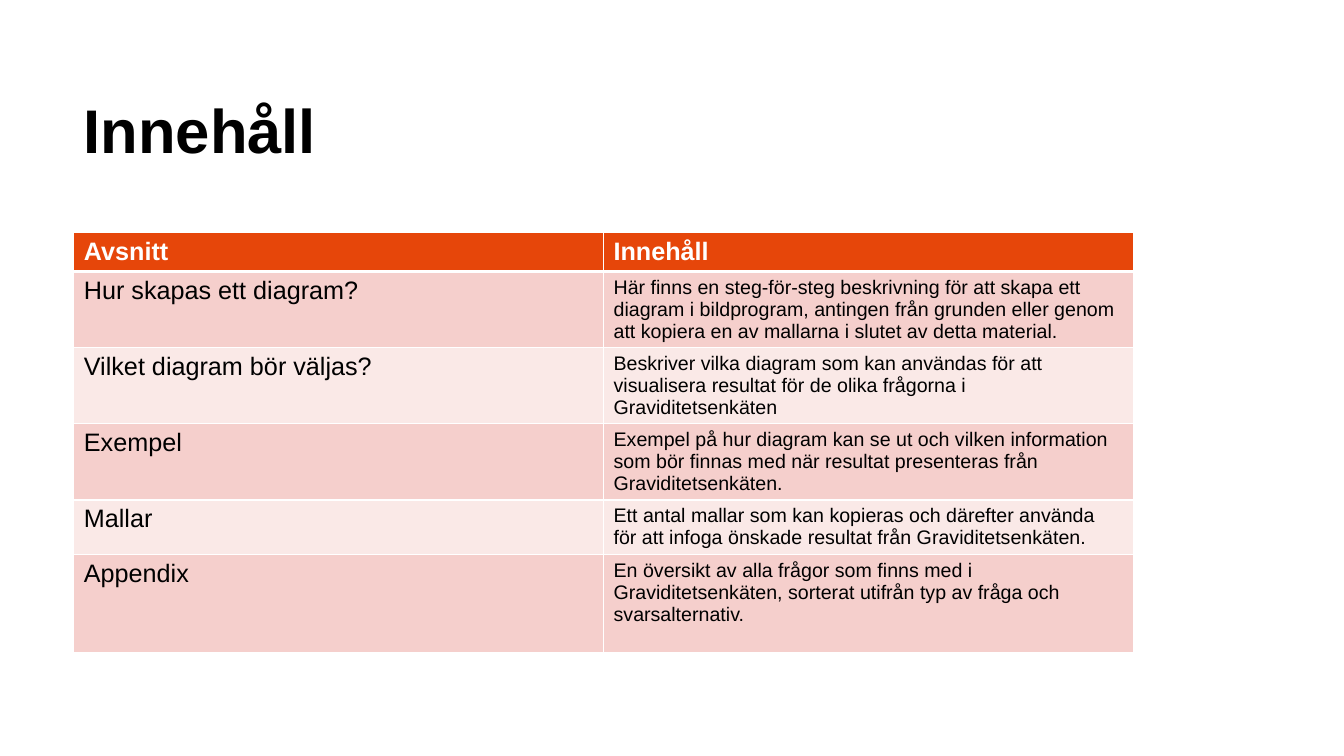
from lxml.etree import SubElement
from pptx import Presentation
from pptx.dml.color import RGBColor
from pptx.enum.text import MSO_ANCHOR
from pptx.oxml.ns import qn
from pptx.util import Cm, Pt

HEADER = ("Avsnitt", "Innehåll")
SECTIONS = [
    ("Hur skapas ett diagram?",
     "Här finns en steg-för-steg beskrivning för att skapa ett diagram i bildprogram, "
     "antingen från grunden eller genom att kopiera en av mallarna i slutet av detta material."),
    ("Vilket diagram bör väljas?",
     "Beskriver vilka diagram som kan användas för att visualisera resultat "
     "för de olika frågorna i Graviditetsenkäten"),
    ("Exempel",
     "Exempel på hur diagram kan se ut och vilken information som bör finnas med "
     "när resultat presenteras från Graviditetsenkäten."),
    ("Mallar",
     "Ett antal mallar som kan kopieras och därefter använda för att infoga "
     "önskade resultat från Graviditetsenkäten."),
    ("Appendix",
     "En översikt av alla frågor som finns med i Graviditetsenkäten, sorterat "
     "utifrån typ av fråga och svarsalternativ."),
]
ROW_HEIGHTS = (0.98, 1.92, 1.92, 1.92, 1.37, 2.47)


def rgb(color):
    return RGBColor.from_string(color)


def write(tf, text, size=18, color="000000", bold=False, spacing=None):
    p = tf.paragraphs[0]
    p.line_spacing = spacing
    r = p.add_run()
    r.text = text
    r.font.name = "Arial"
    r.font.size = Pt(size)
    r.font.bold = bold
    r.font.color.rgb = rgb(color)


class ContentsSlide:
    """Holds the slide and its style, and adds its elements."""

    accent = "E6460A"
    bands = ("F5CFCC", "FAE9E7")
    light = "FFFFFF"

    def __init__(self, prs):
        self.s = prs.slides.add_slide(prs.slide_layouts[6])

    def title(self, text, left, top, width, height):
        tf = self.s.shapes.add_textbox(Cm(left), Cm(top), Cm(width), Cm(height)).text_frame
        tf.word_wrap = True
        tf.vertical_anchor = MSO_ANCHOR.TOP
        tf.margin_top = Cm(0.03)
        write(tf, text, size=44, bold=True, spacing=0.95)

    def borders(self, cell, bottom):
        tc_pr = cell._tc.get_or_add_tcPr()
        widths = {"a:lnL": 1, "a:lnR": 1, "a:lnT": 1, "a:lnB": bottom}
        for i, (tag, width) in enumerate(widths.items()):
            ln = tc_pr.makeelement(qn(tag), {"w": str(Pt(width))})
            SubElement(SubElement(ln, qn("a:solidFill")), qn("a:srgbClr"), val=self.light)
            tc_pr.insert(i, ln)

    def cell(self, cell, text, fill, bottom=1, **style):
        cell.fill.solid()
        cell.fill.fore_color.rgb = rgb(fill)
        self.borders(cell, bottom)
        write(cell.text_frame, text, **style)

    def table(self, header, rows, heights, left, top, width):
        table = self.s.shapes.add_table(
            len(heights), len(header), Cm(left), Cm(top), Cm(width), Cm(sum(heights))).table
        for row, height in zip(table.rows, heights):
            row.height = Cm(height)
        for j, text in enumerate(header):
            self.cell(table.cell(0, j), text, self.accent, bottom=3, color=self.light, bold=True)
        for i, row in enumerate(rows):
            for j, (text, size) in enumerate(zip(row, (18, 14))):
                self.cell(table.cell(i + 1, j), text, self.bands[i % 2], size=size)


def main():
    prs = Presentation()
    prs.slide_width, prs.slide_height = Cm(33.87), Cm(19.05)
    contents = ContentsSlide(prs)
    contents.table(HEADER, SECTIONS, ROW_HEIGHTS, 1.86, 5.86, 26.7)
    contents.title("Innehåll", 1.86, 2.43, 26.7, 3.43)
    prs.save("out.pptx")


if __name__ == "__main__":
    main()
